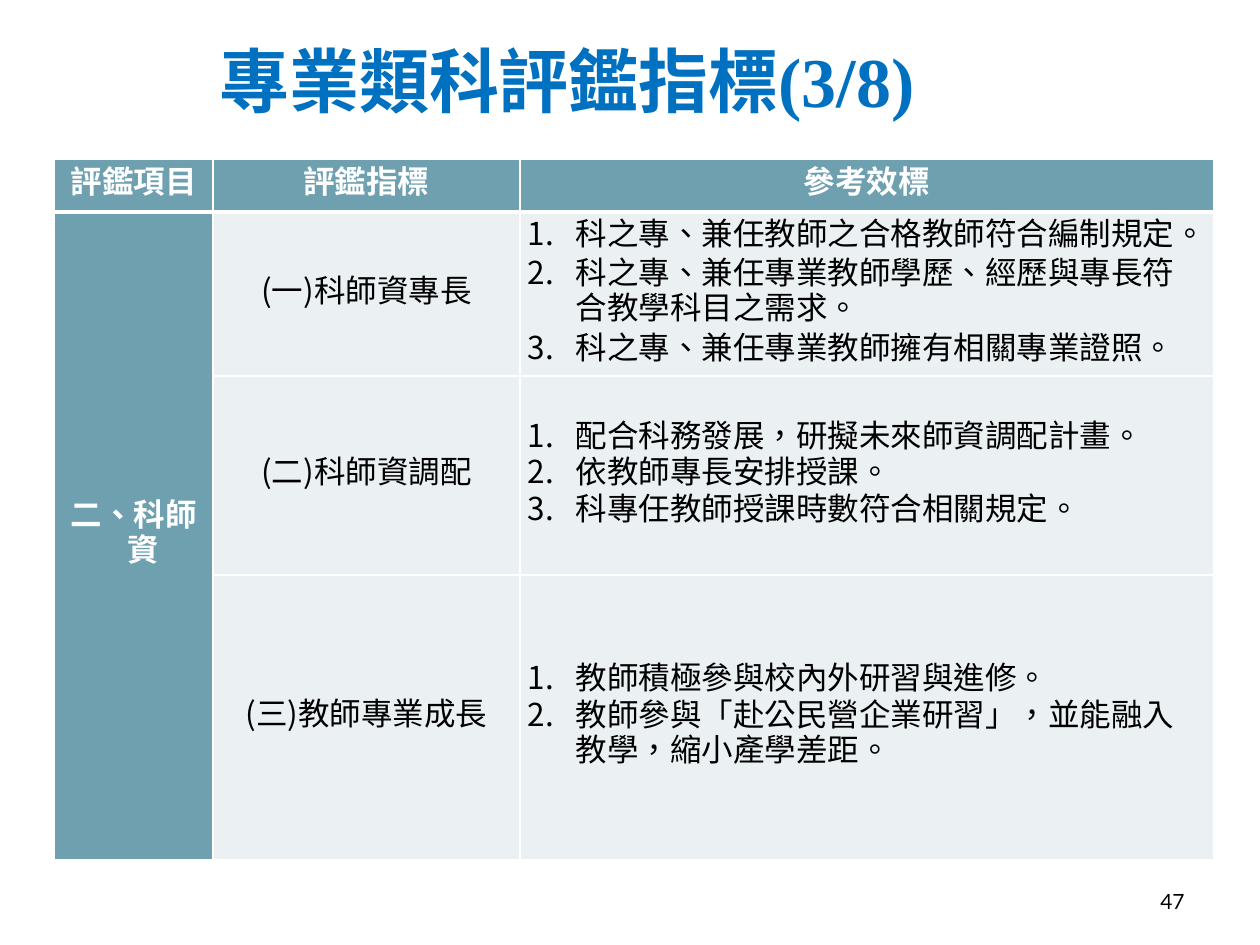
from lxml import etree
from pptx import Presentation
from pptx import util as u
from pptx.dml.color import RGBColor
from pptx.enum import text
from pptx.oxml import ns

SCALE = 914400 // 126
COLORS = {"title": "0070C0", "head": "6EA0B0", "body": "EBF0F2",
          "white": "FFFFFF", "black": "000000"}
SANS = "Noto Sans CJK SC"
LEFT, CENTER, RIGHT = text.PP_ALIGN.LEFT, text.PP_ALIGN.CENTER, text.PP_ALIGN.RIGHT

HEADERS = ["評鑑項目", "評鑑指標", "參考效標"]
CATEGORY = "二、科師資"
INDICATORS = [
    ("(一)科師資專長", 1.2, [
        "科之專、兼任教師之合格教師符合編制規定。",
        "科之專、兼任專業教師學歷、經歷與專長符合教學科目之需求。",
        "科之專、兼任專業教師擁有相關專業證照。"]),
    ("(二)科師資調配", 0.5, [
        "配合科務發展，研擬未來師資調配計畫。",
        "依教師專長安排授課。",
        "科專任教師授課時數符合相關規定。"]),
    ("(三)教師專業成長", 0.5, [
        "教師積極參與校內外研習與進修。",
        "教師參與「赴公民營企業研習」，並能融入教學，縮小產學差距。"]),
]


def px(length):
    return u.Emu(length * SCALE)


def color(name):
    return RGBColor.from_string(COLORS[name])


def write(frame, lines, size=18, font=SANS, ink="black", bold=False, align=LEFT,
          leading=None, gap=0, indent=0, hanging=0, numbered=False):
    for index, line in enumerate(lines):
        para = frame.paragraphs[0] if index == 0 else frame.add_paragraph()
        para.alignment = align
        if leading:
            para.line_spacing = u.Pt(leading)
        para.space_before = u.Pt(gap if index else 0)
        para.space_after = u.Pt(gap)
        properties = para._p.get_or_add_pPr()
        properties.set("marL", str(px(indent)))
        properties.set("indent", str(-px(hanging)))
        if numbered:
            etree.SubElement(properties, ns.qn("a:buFont"), typeface=SANS)
            etree.SubElement(properties, ns.qn("a:buAutoNum"), type="arabicPeriod")
        span = para.add_run()
        span.text = line
        span.font.size = u.Pt(size)
        span.font.bold = bold
        span.font.color.rgb = color(ink)
        span.font.name = font
        run_format = span._r.get_or_add_rPr()
        run_format.set("lang", "zh-TW")
        etree.SubElement(run_format, ns.qn("a:ea"), typeface=SANS)


class Page:
    def __init__(self, deck):
        self.slide = deck.slides.add_slide(deck.slide_layouts[6])

    def box(self, left, top, width, height, line, **style):
        box = self.slide.shapes.add_textbox(px(left), px(top), px(width), px(height))
        frame = box.text_frame
        frame.word_wrap = True
        frame.vertical_anchor = text.MSO_ANCHOR.MIDDLE
        write(frame, [line], **style)

    def table(self, left, top, widths, heights):
        frame = self.slide.shapes.add_table(
            len(heights), len(widths), px(left), px(top),
            px(sum(widths)), px(sum(heights)))
        table = frame.table
        table.first_row = table.horz_banding = False
        for column, width in zip(table.columns, widths):
            column.width = px(width)
        for row, height in zip(table.rows, heights):
            row.height = px(height)
        return table

    def borders(self, cell, top=1, bottom=1):
        properties = cell._tc.get_or_add_tcPr()
        sides = [("L", 1), ("R", 1), ("T", top), ("B", bottom)]
        for index, (side, weight) in enumerate(sides):
            line = etree.Element(ns.qn(f"a:ln{side}"), w=str(u.Pt(weight)))
            fill = etree.SubElement(line, ns.qn("a:solidFill"))
            etree.SubElement(fill, ns.qn("a:srgbClr"), val=COLORS["white"])
            properties.insert(index, line)

    def cell(self, cell, lines, fill, inset=8, **style):
        cell.fill.solid()
        cell.fill.fore_color.rgb = color(fill)
        cell.vertical_anchor = text.MSO_ANCHOR.MIDDLE
        cell.margin_left = cell.margin_right = px(inset)
        cell.margin_top = cell.margin_bottom = 0
        write(cell.text_frame, lines, leading=20, **style)


def main():
    deck = Presentation()
    deck.slide_width, deck.slide_height = u.Inches(10), u.Inches(7.5)
    page = Page(deck)
    page.box(0, 0, 1134, 158, "專業類科評鑑指標(3/8)", size=40,
             font="Times New Roman", ink="title", bold=True, align=CENTER)

    table = page.table(54, 159, [159, 307, 694], [53, 164, 199, 285])
    heading = {"fill": "head", "ink": "white", "bold": True, "align": CENTER}
    for column, header in enumerate(HEADERS):
        hang = 0 if column else 20
        page.cell(table.cell(0, column), [header], inset=6, gap=1.2,
                  indent=hang, hanging=hang, **heading)
    table.cell(1, 0).merge(table.cell(3, 0))
    page.cell(table.cell(1, 0), [CATEGORY], gap=0.5, indent=20, hanging=20, **heading)
    for row, (indicator, gap, criteria) in enumerate(INDICATORS, 1):
        page.cell(table.cell(row, 1), [indicator], "body", gap=0.5, align=CENTER)
        page.cell(table.cell(row, 2), criteria, "body", gap=gap,
                  indent=48, hanging=48, numbered=True)
    for row in range(len(table.rows)):
        for column in range(len(table.columns)):
            page.borders(table.cell(row, column), top=3 if row == 1 else 1,
                         bottom=3 if row == 0 else 1)

    page.box(903, 876, 294, 50, "47", size=12, font="Lato", align=RIGHT)
    deck.save("out.pptx")


if __name__ == "__main__":
    main()
